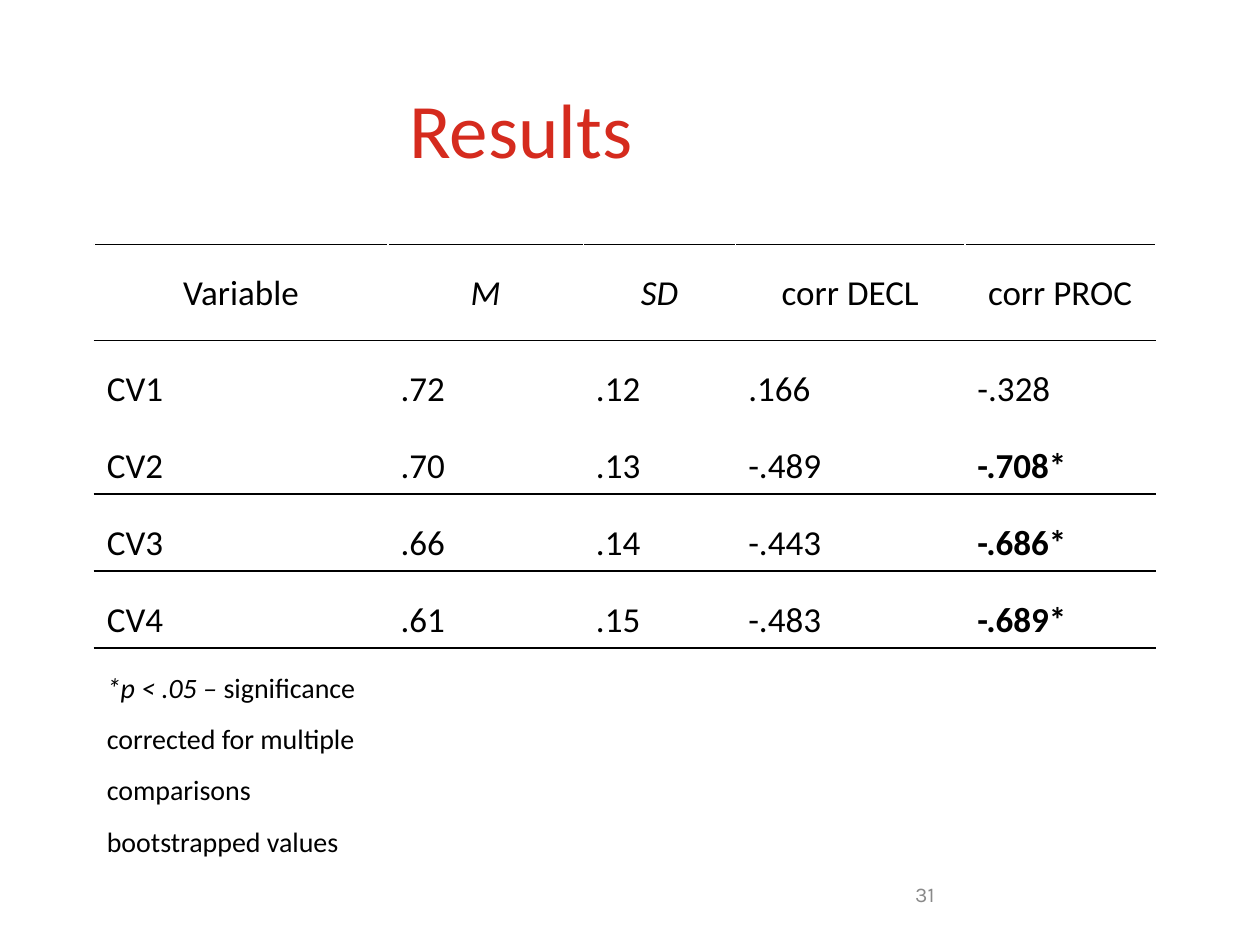
from lxml.etree import SubElement
from pptx import Presentation
from pptx.dml.color import RGBColor
from pptx.enum.text import MSO_ANCHOR, MSO_AUTO_SIZE, PP_ALIGN
from pptx.oxml.ns import qn
from pptx.util import Cm, Pt

BLACK, WHITE, RED, GREY = "000000", "FFFFFF", "D52B1E", "898989"

COLUMN_WIDTHS = [5.92, 3.94, 3.07, 4.62, 3.84]
ROW_HEIGHTS = [1.93, 1.52, 1.52, 1.52, 1.52, 1.4]
HEADINGS = ["Variable", "M", "SD", "corr DECL", "corr PROC"]
RESULTS = [
    ["CV1", ".72", ".12", ".166", "-.328"],
    ["CV2", ".70", ".13", "-.489", "-.708*"],
    ["CV3", ".66", ".14", "-.443", "-.686*"],
    ["CV4", ".61", ".15", "-.483", "-.689*"],
]
# Colour of each horizontal rule, from the top edge of the table down
RULES = [BLACK, BLACK, WHITE, BLACK, BLACK, BLACK]


def color(hex_value):
    return RGBColor.from_string(hex_value)


class ResultsSlide:
    """Holds the text style and the slide being built."""

    text_style = {"name": "Calibri", "size": Pt(20), "bold": False, "italic": False}

    def __init__(self, presentation):
        self.slide = presentation.slides.add_slide(presentation.slide_layouts[5])

    def format_font(self, font, hex_value=BLACK, **changes):
        for name, value in {**self.text_style, **changes}.items():
            setattr(font, name, value)
        font.color.rgb = color(hex_value)

    def add_text(self, paragraph, text, hex_value=BLACK, **changes):
        run = paragraph.add_run()
        run.text = text
        self.format_font(run.font, hex_value, **changes)

    def add_title(self, text, left, top, width, height):
        title = self.slide.shapes.title
        title.left, title.top = Cm(left), Cm(top)
        title.width, title.height = Cm(width), Cm(height)
        frame = title.text_frame
        frame.auto_size = MSO_AUTO_SIZE.NONE
        frame.vertical_anchor = MSO_ANCHOR.TOP
        frame.paragraphs[0].alignment = PP_ALIGN.CENTER
        self.add_text(frame.paragraphs[0], text, RED, size=Pt(44))

    def add_page_number(self, text, left, top, width, height):
        box = self.slide.shapes.add_textbox(Cm(left), Cm(top), Cm(width), Cm(height))
        box.text_frame.word_wrap = True
        self.add_text(box.text_frame.paragraphs[0], text, GREY, name="Karla", size=Pt(12))

    def add_table(self, left, top, width, height):
        frame = self.slide.shapes.add_table(
            len(ROW_HEIGHTS), len(COLUMN_WIDTHS), Cm(left), Cm(top), Cm(width), Cm(height))
        table = frame.table
        table.first_row = table.horz_banding = False
        for column, column_width in zip(table.columns, COLUMN_WIDTHS):
            column.width = Cm(column_width)
        for row, row_height in zip(table.rows, ROW_HEIGHTS):
            row.height = Cm(row_height)
        for row_index, row in enumerate(table.rows):
            for cell in row.cells:
                self.add_borders(cell, row_index)
                cell.fill.background()
        return table

    def add_borders(self, cell, row_index):
        borders = {"a:lnT": RULES[row_index]}
        if row_index + 1 < len(RULES):
            borders = {"a:lnL": WHITE, "a:lnR": WHITE, **borders,
                       "a:lnB": RULES[row_index + 1]}
        properties = cell._tc.get_or_add_tcPr()
        for tag, hex_value in borders.items():
            line = SubElement(properties, qn(tag), w=str(Pt(1)))
            fill = SubElement(line, qn("a:solidFill"))
            SubElement(fill, qn("a:srgbClr"), val=hex_value)

    def fill_cell(self, cell, text, alignment=PP_ALIGN.LEFT, **changes):
        paragraph = cell.text_frame.paragraphs[0]
        paragraph.alignment = alignment
        paragraph.line_spacing = 1.5
        self.add_text(paragraph, text, **changes)


def main():
    presentation = Presentation()
    presentation.slide_width, presentation.slide_height = Cm(25.4), Cm(19.05)
    results = ResultsSlide(presentation)

    table = results.add_table(1.9, 4.93, 21.41, 12.34)
    for column, heading in enumerate(HEADINGS):
        results.fill_cell(table.cell(0, column), heading, PP_ALIGN.CENTER,
                          italic=heading in ("M", "SD"))
    for row, values in enumerate(RESULTS, start=1):
        for column, value in enumerate(values):
            results.fill_cell(table.cell(row, column), value, bold=value.endswith("*"))

    note = table.cell(len(RESULTS) + 1, 0)
    note_size = Pt(16)
    results.fill_cell(note, "*p < .05 – ", size=note_size, italic=True)
    results.add_text(note.text_frame.paragraphs[0],
                     "significance corrected for multiple comparisons", size=note_size)
    last_line = note.text_frame.add_paragraph()
    last_line.line_spacing = 1.5
    results.add_text(last_line, "bootstrapped values", size=note_size)

    results.add_page_number("31", 18.2, 17.65, 5.92, 1.02)
    results.add_title("Results", 1.1, 1.52, 18.8, 3.2)
    presentation.save("out.pptx")


if __name__ == "__main__":
    main()
